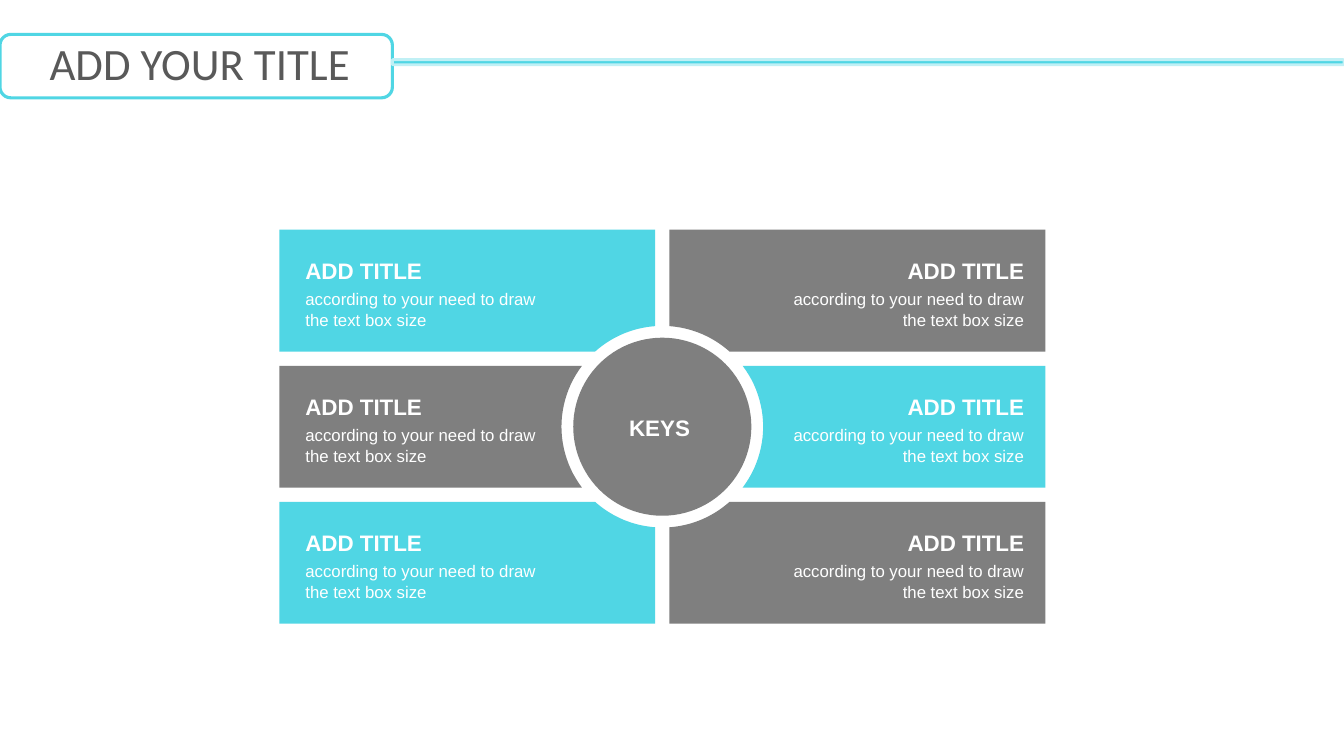
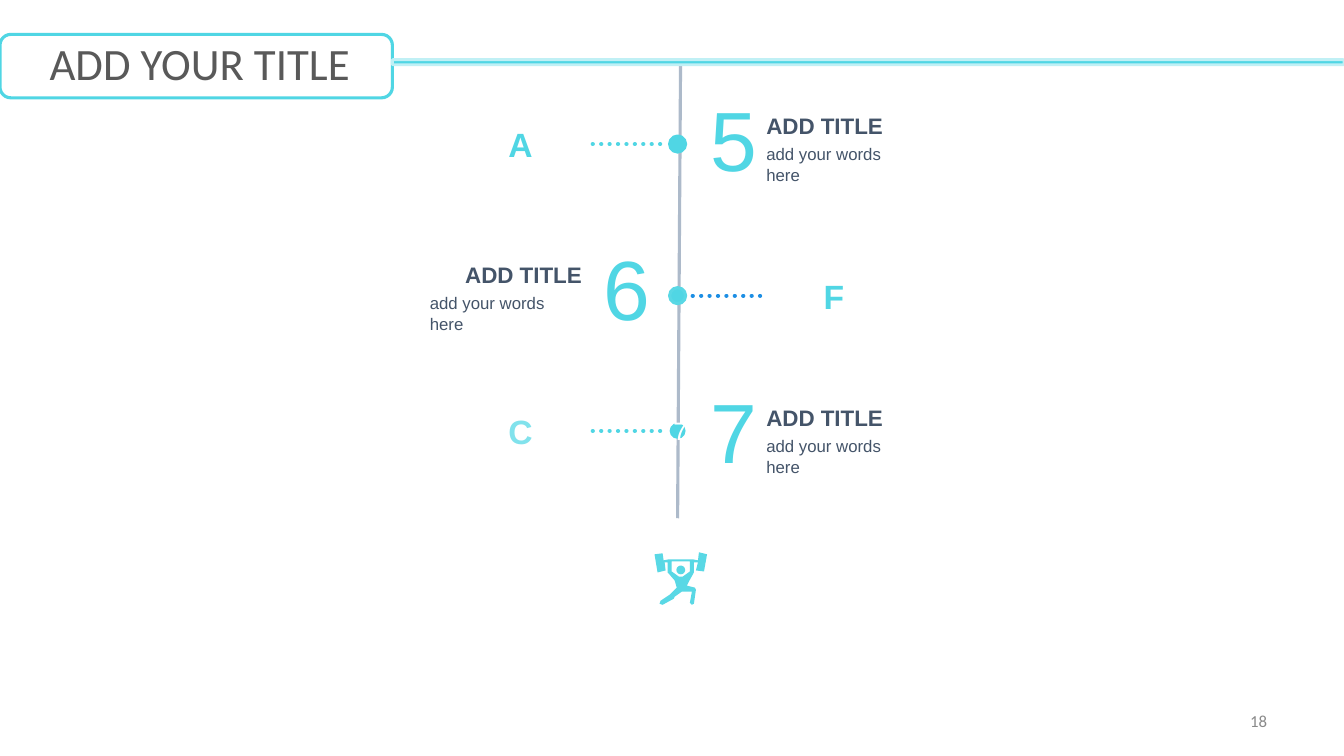
from dataclasses import dataclass
from math import acos, asin, cos, pi, sin

from pptx import Presentation
from pptx.dml.color import RGBColor
from pptx.enum.dml import MSO_LINE
from pptx.enum.shapes import MSO_CONNECTOR, MSO_SHAPE as Preset
from pptx.enum.text import MSO_ANCHOR as Anchor, MSO_AUTO_SIZE as AutoSize, PP_ALIGN as Align
from pptx.oxml.ns import qn
from pptx.oxml.xmlchemy import OxmlElement
from pptx.util import Inches, Pt

# Grid of 32 columns by 18 rows; every length below is in cells
SLIDE_WIDTH, SLIDE_HEIGHT = Inches(13.33), Inches(7.5)
CELL = SLIDE_HEIGHT / 18

CYAN, SOFT_CYAN, PALE_CYAN, MIST = "50D6E4", "59D8E5", "81E2EC", "C0F0F5"
GREY, TITLE_GREY, PAGE_GREY, WHITE = "7F7F7F", "595959", "898989", "FFFFFF"
SLATE, AXIS_GREY, BLUE = "445469", "ADBACA", "1C8EE4"


@dataclass
class Box:
    left: float
    top: float
    width: float
    height: float

    def area(self, x, y, width, height):
        return Box(self.left + x, self.top + y, width, height)

    def emu(self):
        return [cells(n) for n in (self.left, self.top, self.width, self.height)]


@dataclass
class Side:
    """Column offsets of a timeline stop, measured from the axis."""
    digit: float
    caption: float
    lead: tuple
    letter: float
    title_align: Align


def cells(count):
    return round(count * CELL)


def rgb(color):
    return RGBColor.from_string(color)


# Basic parts
def paint(shape, fill=None, line=None, weight=1.0):
    shape.shadow.inherit = False
    if fill:
        shape.fill.solid()
        shape.fill.fore_color.rgb = rgb(fill)
    else:
        shape.fill.background()
    if line:
        shape.line.color.rgb = rgb(line)
        shape.line.width = Pt(weight)
    else:
        shape.line.fill.background()
    return shape


def add_preset(page, preset, box, **style):
    return paint(page.shapes.add_shape(preset, *box.emu()), **style)


def add_outline(page, contours, fill):
    builder = None
    for contour in contours:
        points = [(cells(x), cells(y)) for x, y in contour]
        if builder is None:
            builder = page.shapes.build_freeform(*points[0], scale=1.0)
        else:
            builder.move_to(*points[0])
        builder.add_line_segments(points[1:], close=True)
    return paint(builder.convert_to_shape(), fill=fill)


def add_line(page, start, end, color, weight, dotted=False):
    ends = [cells(n) for n in (*start, *end)]
    connector = page.shapes.add_connector(MSO_CONNECTOR.STRAIGHT, *ends)
    connector.line.color.rgb = rgb(color)
    connector.line.width = Pt(weight)
    properties = connector._element.spPr
    if dotted:
        connector.line.dash_style = MSO_LINE.ROUND_DOT
        properties.find(qn("a:ln")).set("cap", "rnd")
    properties.append(OxmlElement("a:effectLst"))


def write(frame, text, size, color, font="Arial", bold=False, align=Align.LEFT,
          anchor=Anchor.TOP):
    frame.vertical_anchor = anchor
    para = frame.paragraphs[0]
    para.alignment = align
    span = para.add_run()
    span.text = text
    span.font.name, span.font.size, span.font.bold = font, Pt(size), bold
    span.font.color.rgb = rgb(color)


def add_text(page, box, text, size, color, **style):
    frame = page.shapes.add_textbox(*box.emu()).text_frame
    frame.word_wrap = True
    write(frame, text, size, color, **style)
    return frame


def add_tight_text(page, box, text, size, color, **style):
    frame = add_text(page, box, text, size, color, **style)
    frame.margin_left = frame.margin_right = frame.margin_top = frame.margin_bottom = 0
    frame.paragraphs[0].line_spacing = 1.05


def add_caption(page, box, title, body, color, title_align, body_align):
    add_tight_text(page, box.area(0, 0, box.width, 0.65), title, 16, color,
                   bold=True, align=title_align)
    add_tight_text(page, box.area(0, 0.75, box.width, 0.96), body, 12, color,
                   align=body_align)


# Shared header: title frame, band to the right edge, title
def add_header(page, box, text):
    frame = add_preset(page, Preset.ROUNDED_RECTANGLE, box.area(0, 0.1, 9.34, 1.51),
                       line=CYAN, weight=2.25)
    band = add_preset(page, Preset.ROUNDED_RECTANGLE,
                      box.area(9.34, 0.7, box.width - 9.34, 0.12),
                      fill=CYAN, line=MIST, weight=2)
    for shape in (frame, band):
        shape.adjustments[0] = 0.17
    title = page.shapes.title
    title.left, title.top, title.width, title.height = box.area(0.94, 0, 7.7, 1.54).emu()
    title.text_frame.word_wrap = False
    title.text_frame.auto_size = AutoSize.SHAPE_TO_FIT_TEXT
    write(title.text_frame, text, 32, TITLE_GREY, font="Calibri")


# Six panels cut by a ring around a hub
def panel_contour(row, side, center, reach, pitch, half, gap, ring):
    if row == 0:
        begin, finish = asin(half / ring), -asin(half / ring)
        corners = [(reach, -half), (reach, half)]
    else:
        near, far = pitch - half, pitch + half
        begin, finish = asin(near / ring), acos(gap / ring)
        corners = [(gap, far), (reach, far), (reach, near)]
    steps = 24
    angles = [begin + (finish - begin) * i / steps for i in range(steps + 1)]
    arc = [(ring * cos(a), ring * sin(a)) for a in angles]
    flip = row or 1
    return [(center[0] + side * x, center[1] + flip * y) for x, y in corners + arc]


def add_hub_panels(page, box):
    center = (box.left + box.width / 2, box.top + box.height / 2)
    reach, pitch, half, gap, ring, hub = box.width / 2, 3.24, 1.45, 0.17, 2.4, 2.12
    caption_width = 5.8
    for row in (-1, 0, 1):
        for side in (-1, 1):
            color = CYAN if (row == 0) == (side == 1) else GREY
            contour = panel_contour(row, side, center, reach, pitch, half, gap, ring)
            add_outline(page, [contour], color)
            x = 0.62 if side < 0 else box.width - 0.5 - caption_width
            align = Align.LEFT if side < 0 else Align.RIGHT
            add_caption(page, box.area(x, (row + 1) * pitch + 0.62, caption_width, 1.7),
                        "ADD TITLE", "according to your need to draw the text box size",
                        WHITE, align, align)
    add_preset(page, Preset.OVAL, Box(center[0] - hub, center[1] - hub, 2 * hub, 2 * hub),
               fill=GREY)
    add_tight_text(page, Box(center[0] - 1.18, center[1] - 0.32, 2.23, 0.65), "KEYS", 16,
                   WHITE, bold=True, align=Align.CENTER)


# Timeline
RIGHT = Side(0.55, 2.11, (-2.02, -0.29), -4.63, Align.LEFT)
LEFT = Side(-1.99, -5.9, (0.36, 2.09), 2.83, Align.RIGHT)


def add_stop(page, x, y, side, caption_y, digit, letter, letter_color=CYAN,
             lead_color=CYAN, rim=CYAN, mark=None):
    add_line(page, (x + side.lead[0], y), (x + side.lead[1], y), lead_color, 3, dotted=True)
    dot = add_preset(page, Preset.OVAL, Box(x - 0.19, y - 0.19, 0.38, 0.38),
                     fill=CYAN, line=rim, weight=2.25)
    if mark:
        write(dot.text_frame, mark, 18, WHITE, align=Align.CENTER, anchor=Anchor.MIDDLE)
    add_text(page, Box(x + side.letter, y - 0.6, 1.78, 1.22), letter, 24, letter_color,
             bold=True, align=Align.CENTER)
    add_text(page, Box(x + side.digit, caption_y - 0.68, 1.3, 2.66), digit, 60, CYAN)
    add_caption(page, Box(x + side.caption, caption_y, 3.62, 1.7), "ADD TITLE",
                "add your words here", SLATE, side.title_align, Align.LEFT)


def add_timeline(page, box):
    x, top = box.left, box.top
    add_line(page, (x + 0.07, top), (x, top + box.height), AXIS_GREY, 2.25)
    add_stop(page, x, top + 2.01, RIGHT, top + 1.22, "5", "A")
    add_stop(page, x, top + 5.62, LEFT, top + 4.77, "6", "F", lead_color=BLUE,
             rim=SOFT_CYAN)
    add_stop(page, x, top + 8.84, RIGHT, top + 8.18, "7", "C", letter_color=PALE_CYAN,
             rim=None, mark="7")


# Weightlifter drawn on a 52 by 52 raster
LIFTER_BODY = [
    (52, 2), (49, 19), (41, 18), (43, 10), (39, 10), (39, 20), (34, 29), (32, 33), (40, 35),
    (41, 37), (39, 51), (37, 52), (35, 50), (37, 39), (27, 39), (20, 44), (19, 46), (8, 52),
    (5, 51), (6, 48), (15, 42), (22, 35), (20, 28), (14, 21), (13, 20), (13, 10), (10, 10),
    (11, 18), (3, 20), (0, 2), (8, 1), (9, 8), (14, 7), (26, 7), (38, 7), (43, 8), (44, 0)]
LIFTER_ARMS = [(35, 9), (26, 9), (17, 9), (17, 19), (24, 24), (28, 24), (35, 19)]


def add_lifter(page, box):
    head = [(26 + 4.3 * cos(i * pi / 12), 17.5 + 4.3 * sin(i * pi / 12)) for i in range(24)]
    contours = [[(box.left + x * box.width / 52, box.top + y * box.height / 52)
                 for x, y in contour] for contour in (head, LIFTER_BODY, LIFTER_ARMS)]
    add_outline(page, contours, SOFT_CYAN)


def main():
    deck = Presentation()
    deck.slide_width, deck.slide_height = SLIDE_WIDTH, SLIDE_HEIGHT
    title_only = deck.slide_layouts[5]
    header = Box(0, 0.72, SLIDE_WIDTH / CELL, 1.61)

    # Hub slide
    page = deck.slides.add_slide(title_only)
    add_hub_panels(page, Box(6.65, 5.47, 18.23, 9.38))
    add_header(page, header, "ADD YOUR TITLE")

    # Timeline slide
    page = deck.slides.add_slide(title_only)
    add_timeline(page, Box(16.13, 1.42, 0, 10.92))
    add_lifter(page, Box(15.58, 13.15, 1.25, 1.25))
    add_header(page, header, "ADD YOUR TITLE")
    add_text(page, Box(22.94, 16.68, 7.46, 0.96), "18", 12, PAGE_GREY, font="Calibri",
             align=Align.RIGHT, anchor=Anchor.MIDDLE)

    deck.save("out.pptx")


if __name__ == "__main__":
    main()
